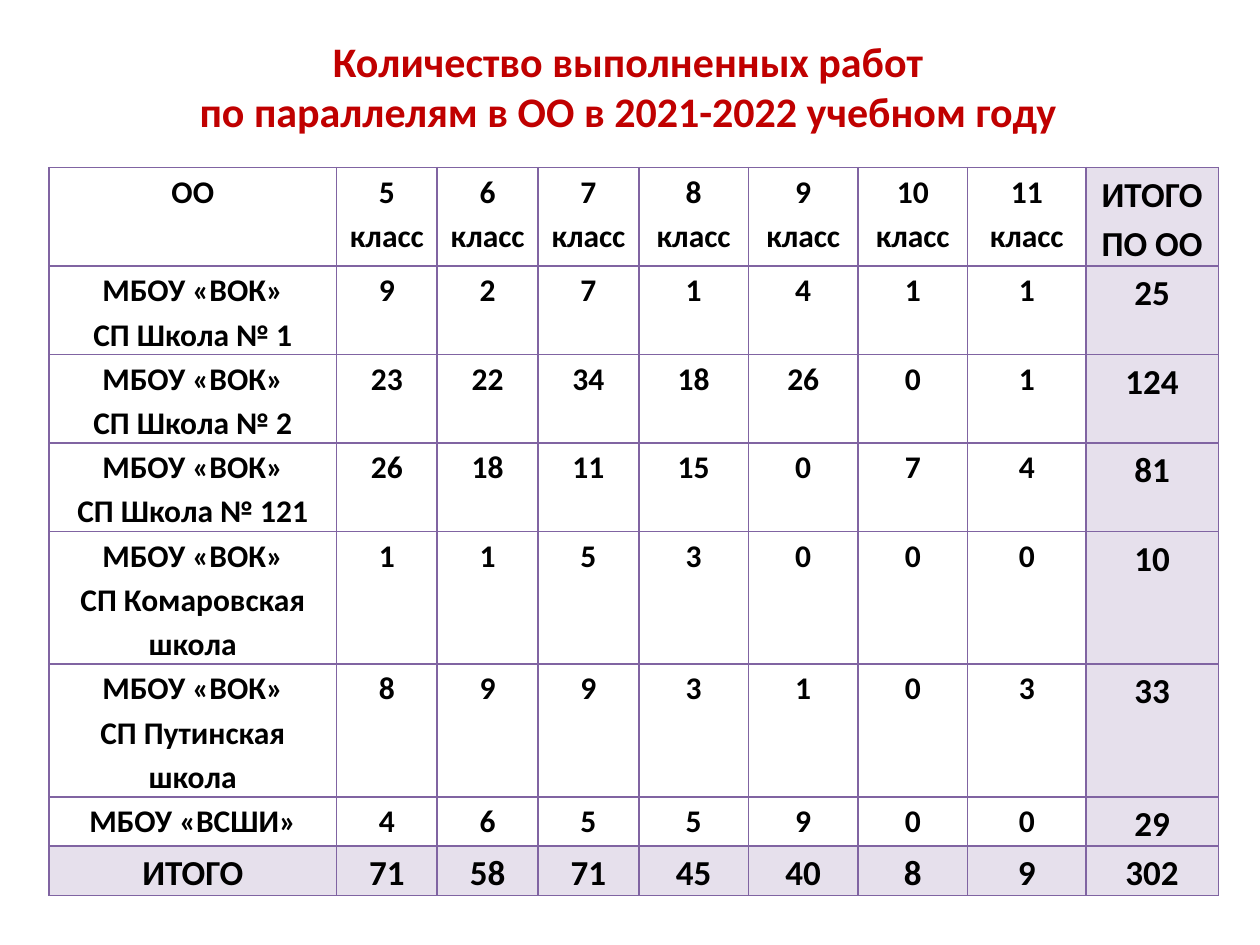
from dataclasses import dataclass

from lxml.etree import SubElement
from pptx import Presentation
from pptx.dml.color import RGBColor
from pptx.enum.text import MSO_ANCHOR, PP_ALIGN
from pptx.oxml.ns import qn
from pptx.util import Inches, Pt

WIDTH, HEIGHT = 10, 7.5
RED, BLACK, PURPLE, LILAC = "C00000", "000000", "8064A2", "E6E0EC"
TITLE = ["Количество выполненных работ",
         "по параллелям в ОО в 2021-2022 учебном году"]
COLS = [2.28] + [0.8] * 3 + [0.87] * 3 + [0.94, 1.05]
ROWS = [0.64] * 4 + [0.97] * 2 + [0.32] * 2


@dataclass
class School:
    name: list[str]
    works: list[int]


@dataclass
class Style:
    size: int
    color: str = BLACK
    gap: float = 1.0


TEXT, SUM = Style(18, gap=1.15), Style(20, gap=1.15)
BRANCH = "МБОУ «ВОК»"
SCHOOLS = [
    School([BRANCH, "СП Школа № 1"], [9, 2, 7, 1, 4, 1, 1]),
    School([BRANCH, "СП Школа № 2"], [23, 22, 34, 18, 26, 0, 1]),
    School([BRANCH, "СП Школа № 121"], [26, 18, 11, 15, 0, 7, 4]),
    School([BRANCH, "СП Комаровская школа"], [1, 1, 5, 3, 0, 0, 0]),
    School([BRANCH, "СП Путинская школа"], [8, 9, 9, 3, 1, 0, 3]),
    School(["МБОУ «ВСШИ»"], [4, 6, 5, 5, 9, 0, 0]),
]


def paint(code: str) -> RGBColor:
    return RGBColor.from_string(code)


def write(frame, lines: list[str], style: Style) -> None:
    for i, line in enumerate(lines):
        para = frame.add_paragraph() if i else frame.paragraphs[0]
        para.alignment = PP_ALIGN.CENTER
        para.line_spacing = style.gap
        run = para.add_run()
        run.text = line
        font = run.font
        font.name, font.size, font.bold = "Calibri", Pt(style.size), True
        font.color.rgb = paint(style.color)


def border(cell) -> None:
    props = cell._tc.get_or_add_tcPr()
    for side in ("lnL", "lnR", "lnT", "lnB"):
        line = SubElement(props, qn(f"a:{side}"), w=str(Pt(1)))
        fill = SubElement(line, qn("a:solidFill"))
        SubElement(fill, qn("a:srgbClr"), val=PURPLE)


def draw_cell(cell, lines: list[str], total: bool, style: Style) -> None:
    cell.margin_left = cell.margin_right = Inches(0.07)
    cell.margin_top = cell.margin_bottom = 0
    border(cell)
    if total:
        cell.fill.solid()
        cell.fill.fore_color.rgb = paint(LILAC)
    else:
        cell.fill.background()
    write(cell.text_frame, lines, style)


def build_grid() -> list[list[list[str]]]:
    """Lines of text per cell, with the totals of rows and columns added."""
    grades = [[f"{n} класс"] for n in range(5, 12)]
    head = [["ОО"], *grades, ["ИТОГО ПО ОО"]]
    body = [[s.name, *([str(n)] for n in [*s.works, sum(s.works)])]
            for s in SCHOOLS]
    sums = [sum(col) for col in zip(*(s.works for s in SCHOOLS))]
    foot = [["ИТОГО"], *([str(n)] for n in [*sums, sum(sums)])]
    # Grades 8 and 9 keep the word on a line of its own.
    for col in (4, 5):
        head[col] = head[col][0].split()
    return [head, *body, foot]


def draw_table(slide) -> None:
    frame = slide.shapes.add_table(
        len(ROWS), len(COLS), Inches(0.39), Inches(1.33),
        Inches(sum(COLS)), Inches(sum(ROWS)))
    table = frame.table
    table.first_row = table.horz_banding = False
    for col, wide in zip(table.columns, COLS):
        col.width = Inches(wide)
    for row, tall in zip(table.rows, ROWS):
        row.height = Inches(tall)
    for r, row in enumerate(build_grid()):
        for c, lines in enumerate(row):
            total = r == len(ROWS) - 1 or c == len(COLS) - 1
            draw_cell(table.cell(r, c), lines, total, SUM if total else TEXT)


def draw_title(slide) -> None:
    left, wide = 0.23, 9.51
    box = slide.shapes.add_textbox(
        Inches(left), Inches(0.23), Inches(wide), Inches(1.21))
    frame = box.text_frame
    frame.word_wrap = True
    frame.vertical_anchor = MSO_ANCHOR.TOP
    write(frame, TITLE, Style(24, RED))


def main() -> None:
    deck = Presentation()
    deck.slide_width, deck.slide_height = Inches(WIDTH), Inches(HEIGHT)
    slide = deck.slides.add_slide(deck.slide_layouts[6])
    draw_table(slide)
    draw_title(slide)
    deck.save("out.pptx")


if __name__ == "__main__":
    main()
